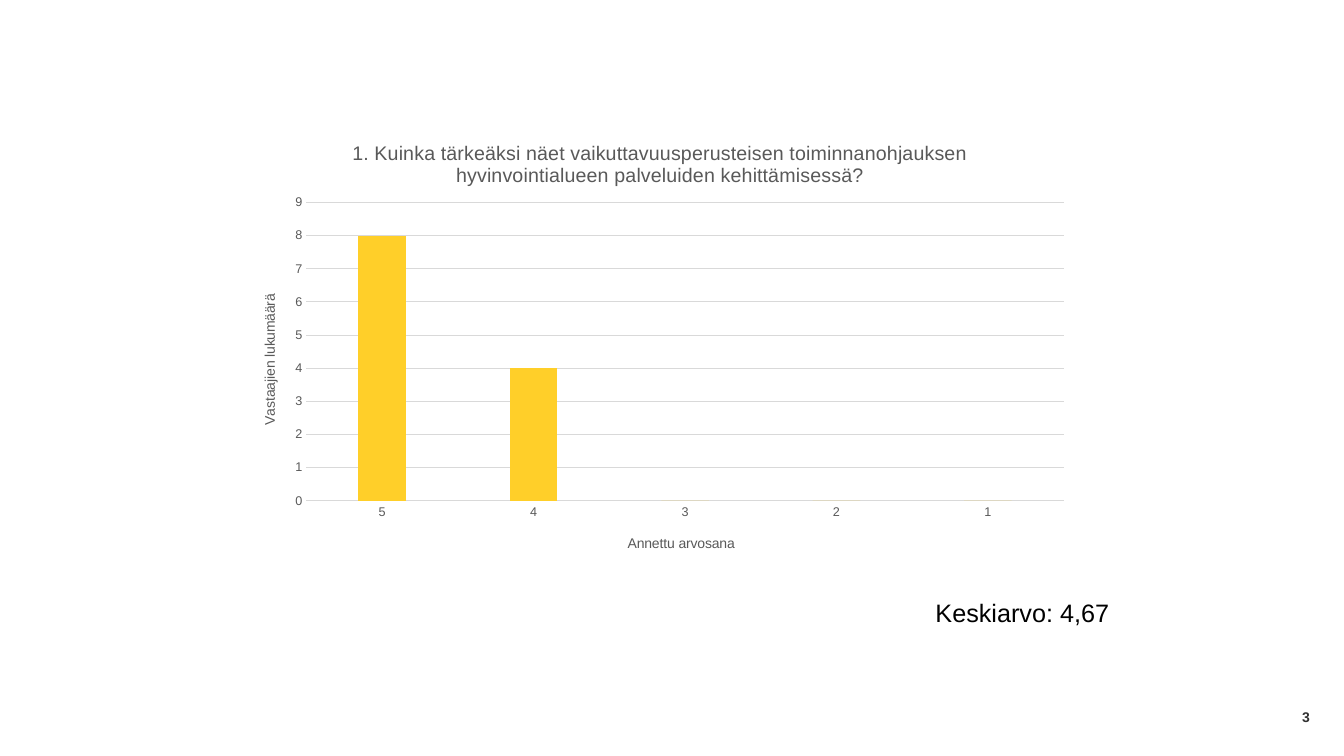
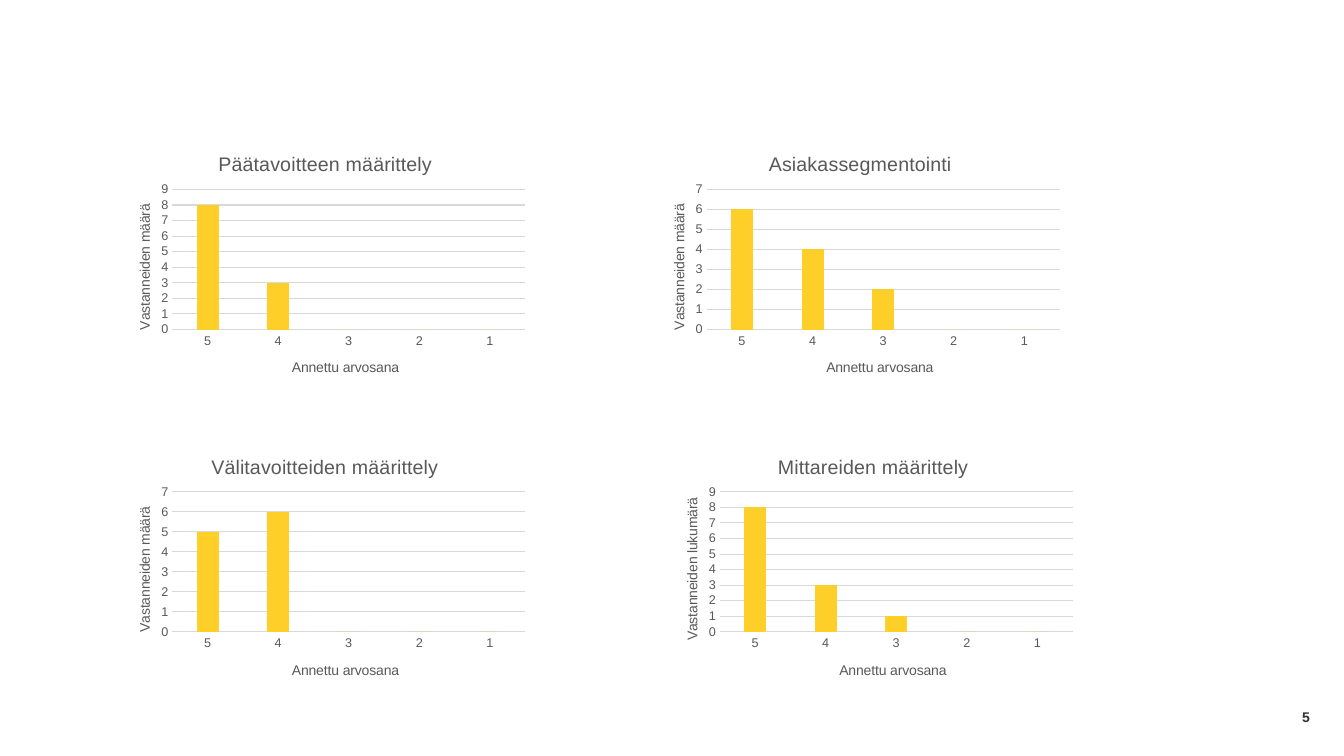
from dataclasses import dataclass

from lxml.etree import SubElement
from pptx import Presentation
from pptx.chart.data import CategoryChartData
from pptx.dml.color import RGBColor
from pptx.enum.chart import XL_CHART_TYPE as ChartType, XL_TICK_MARK as TickMark
from pptx.enum.text import MSO_ANCHOR as Anchor, PP_ALIGN as Align
from pptx.oxml.ns import qn
from pptx.util import Inches, Pt

FONT = "Arial"
BLACK, DARK, GRAY, RULE, YELLOW = "000000", "313131", "595959", "D9D9D9", "FFCF29"
GRADES = ["5", "4", "3", "2", "1"]


@dataclass(frozen=True)
class Box:
    left: float
    top: float
    width: float
    height: float


@dataclass(frozen=True)
class Survey:
    title: str
    value_title: str
    votes: tuple[int, ...]
    frame: Box
    plot: Box
    title_at: tuple[float, float]
    value_title_at: tuple[float, float]
    grade_title_at: tuple[float, float]


def color(value: str) -> RGBColor:
    return RGBColor.from_string(value)


def style_font(font, size: float, value: str, bold: bool = False) -> None:
    font.name = FONT
    font.size = Pt(size)
    font.bold = bold
    font.color.rgb = color(value)


def add_text(slide, text: str, box: Box, size: float, value: str, bold: bool = False,
             align=Align.LEFT, anchor=Anchor.TOP, inset: bool = True) -> None:
    shape = slide.shapes.add_textbox(*map(Inches, (box.left, box.top, box.width, box.height)))
    frame = shape.text_frame
    frame.word_wrap = True
    frame.vertical_anchor = anchor
    if not inset:
        frame.margin_left = frame.margin_right = frame.margin_top = frame.margin_bottom = 0
    paragraph = frame.paragraphs[0]
    paragraph.alignment = align
    run = paragraph.add_run()
    run.text = text
    style_font(run.font, size, value, bold)


def set_layout(parent, index: int, values: dict[str, float], inner: bool = False) -> None:
    for old in parent.findall(qn("c:layout")):
        parent.remove(old)
    layout = SubElement(parent, qn("c:layout"))
    parent.insert(index, layout)
    manual = SubElement(layout, qn("c:manualLayout"))
    if inner:
        SubElement(manual, qn("c:layoutTarget"), val="inner")
    for mode in ("xMode", "yMode"):
        SubElement(manual, qn(f"c:{mode}"), val="edge")
    for name, value in values.items():
        SubElement(manual, qn(f"c:{name}"), val=f"{value:.4f}")


def add_title(owner, text: str, size: float, at: tuple[float, float], frame: Box) -> None:
    title = owner.chart_title if hasattr(owner, "chart_title") else owner.axis_title
    run = title.text_frame.paragraphs[0].add_run()
    run.text = text
    style_font(run.font, size, GRAY)
    set_layout(title.element if hasattr(title, "element") else title._element, 1,
               {"x": at[0] / frame.width, "y": at[1] / frame.height})


def style_axis(axis) -> None:
    axis.major_tick_mark = axis.minor_tick_mark = TickMark.NONE
    style_font(axis.tick_labels.font, 9, GRAY)


def add_survey(slide, survey: Survey) -> None:
    frame, plot_box = survey.frame, survey.plot
    data = CategoryChartData()
    data.categories = GRADES
    data.add_series(survey.title, survey.votes)
    chart = slide.shapes.add_chart(
        ChartType.COLUMN_CLUSTERED,
        *map(Inches, (frame.left, frame.top, frame.width, frame.height)), data).chart
    chart.has_legend = False
    style_font(chart.font, 10, BLACK)

    plot = chart.plots[0]
    plot.gap_width = 219
    plot.overlap = -27
    plot.vary_by_categories = False
    fill = plot.series[0].format.fill
    fill.solid()
    fill.fore_color.rgb = color(YELLOW)

    grades, counts = chart.category_axis, chart.value_axis
    style_axis(grades)
    style_axis(counts)
    counts.minimum_scale = 0
    counts.maximum_scale = max(survey.votes) + 1
    counts.major_unit = 1
    counts.format.line.fill.background()
    for line in (grades.format.line, counts.major_gridlines.format.line):
        line.color.rgb = color(RULE)
        line.width = Pt(0.75)

    add_title(chart, survey.title, 14, survey.title_at, frame)
    add_title(grades, "Annettu arvosana", 10, survey.grade_title_at, frame)
    add_title(counts, survey.value_title, 10, survey.value_title_at, frame)
    set_layout(chart.element.find(f".//{qn('c:plotArea')}"), 0, {
        "x": plot_box.left / frame.width, "y": plot_box.top / frame.height,
        "w": plot_box.width / frame.width, "h": plot_box.height / frame.height}, inner=True)


def small_survey(title: str, value_title: str, votes: tuple[int, ...], left: float, top: float,
                 title_left: float, value_title_top: float) -> Survey:
    return Survey(title, value_title, votes, Box(left, top, 4.2, 2.59), Box(0.61, 0.57, 3.5, 1.39),
                  (title_left, 0.16), (0.22, value_title_top), (1.77, 2.22))


def add_numbered_slide(presentation, number: int):
    slide = presentation.slides.add_slide(presentation.slide_layouts[6])
    add_text(slide, str(number), Box(9.99, 6.91, 3, 0.4), 10, DARK, True,
             Align.RIGHT, Anchor.MIDDLE, inset=False)
    return slide


IMPORTANCE = Survey(
    "1. Kuinka tärkeäksi näet vaikuttavuusperusteisen toiminnanohjauksen "
    "hyvinvointialueen palveluiden kehittämisessä?",
    "Vastaajien lukumäärä", (8, 4, 0, 0, 0), Box(2.33, 1.17, 8.38, 4.48),
    Box(0.71, 0.84, 7.51, 2.96), (1.13, 0.19), (0.23, 1.72), (3.87, 4.1))

LEFT, UPPER, LOWER = 1.1, 1.31, 4.31
STEPS = [
    small_survey("Päätavoitteen määrittely", "Vastanneiden määrä", (8, 3, 0, 0, 0),
                 LEFT, UPPER, 1.03, 0.69),
    small_survey("Asiakassegmentointi", "Vastanneiden määrä", (6, 4, 2, 0, 0),
                 6.4, UPPER, 1.19, 0.69),
    small_survey("Välitavoitteiden määrittely", "Vastanneiden määrä", (5, 6, 0, 0, 0),
                 LEFT, LOWER, 0.96, 0.69),
    small_survey("Mittareiden määrittely", "Vastanneiden lukumärä", (8, 3, 1, 0, 0),
                 6.53, LOWER, 1.15, 0.6),
]


def main() -> None:
    presentation = Presentation()
    presentation.slide_width = Inches(13.33)
    presentation.slide_height = Inches(7.5)

    importance_slide = add_numbered_slide(presentation, 3)
    add_survey(importance_slide, IMPORTANCE)
    add_text(importance_slide, "Keskiarvo: 4,67", Box(9.18, 5.88, 2.69, 0.4), 18, BLACK)

    steps_slide = add_numbered_slide(presentation, 5)
    for survey in STEPS:
        add_survey(steps_slide, survey)

    presentation.save("out.pptx")


if __name__ == "__main__":
    main()
